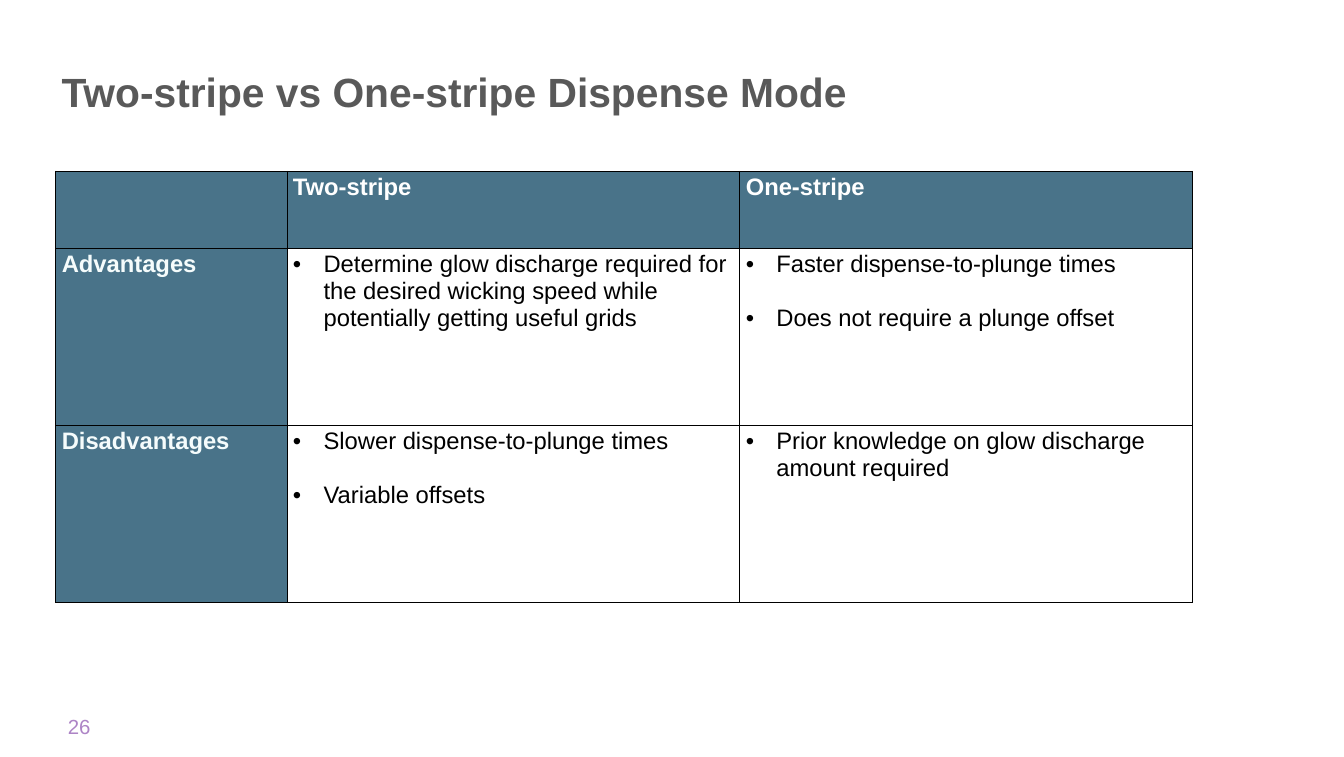
"""Build the slide comparing two-stripe and one-stripe dispense modes."""
from dataclasses import dataclass

from lxml import etree
from pptx import Presentation
from pptx import util as u
from pptx.dml import color
from pptx.enum import text
from pptx.oxml import ns

TEAL, WHITE, PALE, BLACK = "497389", "FFFFFF", "F5FCFC", "000000"
GREY, PURPLE = "595959", "AD84C6"
LEFT = 2.31
INDENT = u.Cm(1.27)
COLUMN_WIDTHS = (9.6, 18.8, 18.8)
ROW_HEIGHTS = (3.2, 7.34, 7.34)


@dataclass
class Label:
    content: str
    top: float
    width: float
    height: float
    size: float
    colour: str
    bold: bool = False
    line_spacing: float = 1.0
    inset_x: float = 0.25
    inset_y: float = 0.13


@dataclass
class Entry:
    lines: tuple[str, ...] = ()
    colour: str = BLACK
    heading: bool = False


LABELS = (
    Label("26", 29.31, 13.03, 1.68, 24, PURPLE, inset_x=0.51, inset_y=0.25),
    Label("Two-stripe vs One-stripe Dispense Mode", 2.11, 46.13, 3.61, 48, GREY,
          bold=True, line_spacing=0.9),
)
COMPARISON = (
    (
        Entry(heading=True),
        Entry(("Two-stripe",), WHITE, True),
        Entry(("One-stripe",), WHITE, True),
    ),
    (
        Entry(("Advantages",), PALE, True),
        Entry(("Determine glow discharge required for the desired wicking speed "
               "while potentially getting useful grids",)),
        Entry(("Faster dispense-to-plunge times", "Does not require a plunge offset")),
    ),
    (
        Entry(("Disadvantages",), PALE, True),
        Entry(("Slower dispense-to-plunge times", "Variable offsets")),
        Entry(("Prior knowledge on glow discharge amount required",)),
    ),
)


def rgb(value: str) -> color.RGBColor:
    """Turn a hex string into a colour."""
    return color.RGBColor.from_string(value)


def set_font(paragraph, size: float, colour: str, bold: bool) -> None:
    """Give a paragraph its font."""
    font = paragraph.font
    font.name, font.size, font.bold = "Arial", u.Pt(size), bold
    font.color.rgb = rgb(colour)


def add_label(slide, label: Label) -> None:
    """Draw one line of text, centred vertically in its box."""
    box = slide.shapes.add_textbox(
        u.Cm(LEFT), u.Cm(label.top), u.Cm(label.width), u.Cm(label.height))
    frame = box.text_frame
    frame.word_wrap = True
    frame.vertical_anchor = text.MSO_ANCHOR.MIDDLE
    frame.margin_left = frame.margin_right = u.Cm(label.inset_x)
    frame.margin_top = frame.margin_bottom = u.Cm(label.inset_y)
    paragraph = frame.paragraphs[0]
    paragraph.text = label.content
    paragraph.line_spacing = label.line_spacing
    set_font(paragraph, label.size, label.colour, label.bold)


def add_bullet(paragraph) -> None:
    """Give a paragraph a hanging bullet."""
    properties = paragraph._p.get_or_add_pPr()
    properties.set("marL", str(INDENT))
    properties.set("indent", str(-INDENT))
    etree.SubElement(properties, ns.qn("a:buFont"), typeface="Arial")
    etree.SubElement(properties, ns.qn("a:buChar"), char="•")


def add_borders(cell) -> None:
    """Outline a cell with thin black lines."""
    properties = cell._tc.get_or_add_tcPr()
    for position, side in enumerate(("lnL", "lnR", "lnT", "lnB")):
        line = etree.Element(ns.qn(f"a:{side}"), w=str(u.Pt(1)))
        fill = etree.SubElement(line, ns.qn("a:solidFill"))
        etree.SubElement(fill, ns.qn("a:srgbClr"), val=BLACK)
        properties.insert(position, line)


def fill_cell(cell, entry: Entry) -> None:
    """Write one entry into its cell."""
    if entry.heading:
        cell.fill.solid()
        cell.fill.fore_color.rgb = rgb(TEAL)
    else:
        cell.fill.background()
    add_borders(cell)
    frame = cell.text_frame
    for number, line in enumerate(entry.lines):
        paragraph = frame.add_paragraph() if number else frame.paragraphs[0]
        paragraph.text = line
        if number:
            paragraph.space_before = u.Pt(31.5)
        if not entry.heading:
            add_bullet(paragraph)
        set_font(paragraph, 28, entry.colour, entry.heading)


def add_comparison(slide) -> None:
    """Draw the table of advantages and disadvantages."""
    table = slide.shapes.add_table(
        len(ROW_HEIGHTS), len(COLUMN_WIDTHS), u.Cm(LEFT), u.Cm(7.11),
        u.Cm(sum(COLUMN_WIDTHS)), u.Cm(sum(ROW_HEIGHTS))).table
    table.first_row = table.horz_banding = False
    for column, width in zip(table.columns, COLUMN_WIDTHS):
        column.width = u.Cm(width)
    for row, height, entries in zip(table.rows, ROW_HEIGHTS, COMPARISON):
        row.height = u.Cm(height)
        for cell, entry in zip(row.cells, entries):
            fill_cell(cell, entry)


def main() -> None:
    """Build and save the presentation."""
    deck = Presentation()
    deck.slide_width, deck.slide_height = u.Cm(55.8), u.Cm(31.42)
    slide = deck.slides.add_slide(deck.slide_layouts[6])
    for label in LABELS:
        add_label(slide, label)
    add_comparison(slide)
    deck.save("out.pptx")


if __name__ == "__main__":
    main()
